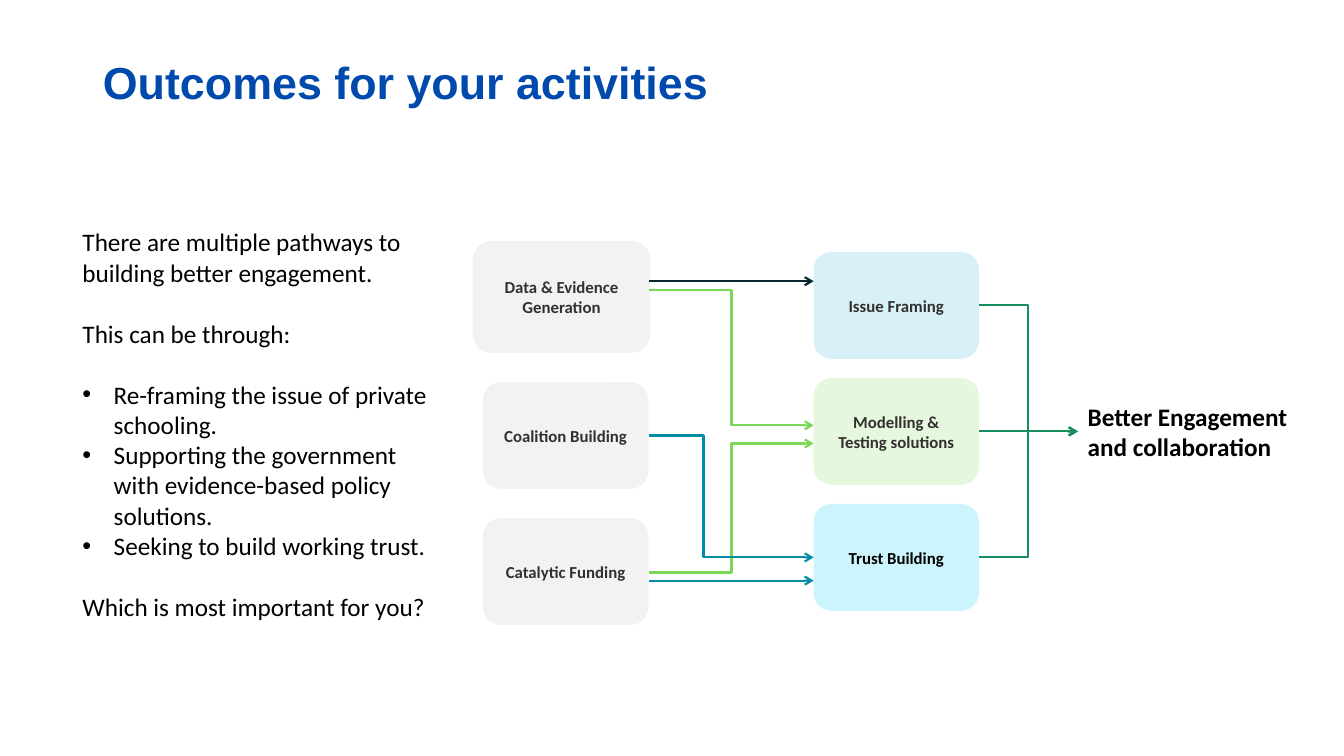
import pptx
import pptx.util
import pptx.dml.color
import pptx.enum.shapes
import pptx.enum.text
import pptx.oxml
import pptx.oxml.ns
from lxml import etree

CELL = pptx.util.Inches(0.1)
GREY, INK, BLACK = "F2F2F2", "34302F", "000000"
LIME, TEAL, GREEN, NAVY = "7BD857", "008DA5", "148F5D", "082730"


def cells(*counts):
    """Turn counts of grid cells into lengths."""
    return [round(count * CELL) for count in counts]


def colour(hex_code):
    """Turn a hex string into a colour."""
    return pptx.dml.color.RGBColor.from_string(hex_code)


def write(paragraph, text, size, hex_code, bold=False, font="Calibri"):
    """Add one formatted run to a paragraph."""
    run = paragraph.add_run()
    run.text = text
    run.font.name, run.font.size, run.font.bold = font, pptx.util.Pt(size), bold
    run.font.color.rgb = colour(hex_code)


def text_area(slide, box):
    """Add a wrapping text box and return its text frame."""
    frame = slide.shapes.add_textbox(*cells(*box)).text_frame
    frame.word_wrap = True
    return frame


def add_heading(slide, box, text):
    """Place and format the title."""
    heading = slide.shapes.title
    heading.left, heading.top, heading.width, heading.height = cells(*box)
    frame = heading.text_frame
    frame.auto_size = pptx.enum.text.MSO_AUTO_SIZE.NONE
    frame.vertical_anchor = pptx.enum.text.MSO_ANCHOR.MIDDLE
    paragraph = frame.paragraphs[0]
    paragraph.alignment = pptx.enum.text.PP_ALIGN.LEFT
    paragraph.line_spacing = 0.9
    write(paragraph, text, 32, "004AAD", True, "Arial")


def add_explanation(slide, box):
    """Write the left column with its bulleted pathways."""
    lines = [
        ("There are multiple pathways to building better engagement.", False, 0),
        ("This can be through:", False, 22),
        ("Re-framing the issue of private schooling.", True, 22),
        ("Supporting the government with evidence-based policy solutions.", True, 0),
        ("Seeking to build working trust.", True, 0),
        ("Which is most important for you?", False, 22),
    ]
    frame = text_area(slide, box)
    for index, (text, bulleted, gap) in enumerate(lines):
        paragraph = frame.add_paragraph() if index else frame.paragraphs[0]
        paragraph.space_before = pptx.util.Pt(gap)
        write(paragraph, text, 18, BLACK)
        if bulleted:
            properties = paragraph._p.get_or_add_pPr()
            indent = pptx.util.Inches(0.31)
            properties.set("marL", str(indent))
            properties.set("indent", str(-indent))
            for tag, key, value in (("a:buFont", "typeface", "Arial"), ("a:buChar", "char", "•")):
                etree.SubElement(properties, pptx.oxml.ns.qn(tag)).set(key, value)


def add_step(slide, box, text, fill, ink=INK):
    """Draw one rounded step of the pathway."""
    step = slide.shapes.add_shape(
        pptx.enum.shapes.MSO_SHAPE.ROUNDED_RECTANGLE, *cells(*box))
    step.shadow.inherit = False
    step.fill.solid()
    step.fill.fore_color.rgb = colour(fill)
    step.line.fill.background()
    frame = step.text_frame
    frame.word_wrap = True
    frame.vertical_anchor = pptx.enum.text.MSO_ANCHOR.MIDDLE
    paragraph = frame.paragraphs[0]
    paragraph.alignment = pptx.enum.text.PP_ALIGN.CENTER
    write(paragraph, text, 12, ink, True)


def add_link(slide, start, end, hex_code, bend=None):
    """Draw an arrow, bent at a share of its width when one is given."""
    kinds = pptx.enum.shapes.MSO_CONNECTOR
    kind = kinds.STRAIGHT if bend is None else kinds.ELBOW
    link = slide.shapes.add_connector(kind, *cells(*start, *end))
    link.line.color.rgb = colour(hex_code)
    link.line.width = pptx.util.Pt(1.5)
    qn = pptx.oxml.ns.qn
    properties = link._element.spPr
    etree.SubElement(properties.find(qn("a:ln")), qn("a:tailEnd")).set("type", "arrow")
    etree.SubElement(properties, qn("a:effectLst"))
    if bend is not None:
        guide = etree.SubElement(properties.find(qn("a:prstGeom")).find(qn("a:avLst")), qn("a:gd"))
        guide.set("name", "adj1")
        guide.set("fmla", f"val {round(bend * 100000)}")


def add_pathways(slide, box):
    """Draw activities, outcomes, the goal and the arrows between them."""
    left, top, width, height = box
    step_width, step_height = 16.4, 10.6
    activity_right, outcome_left = left + 17.5, left + 33.8
    outcome_right, goal_left = outcome_left + step_width, left + 60

    add_step(slide, (left, top, 17.6, 11.1), "Data & Evidence Generation", GREY)
    for text, offset in (("Coalition Building", 14), ("Catalytic Funding", 27.5)):
        add_step(slide, (left + 1, top + offset, step_width, step_height), text, GREY)

    outcomes = [
        ("Issue Framing", "D8F1F9", INK),
        ("Modelling & Testing solutions", "E5F7DD", INK),
        ("Trust Building", "CCF4FC", BLACK),
    ]
    goal_middle = top + 18.9
    for row, (text, fill, ink) in enumerate(outcomes):
        outcome_top = top + 1.1 + 12.5 * row
        add_step(slide, (outcome_left, outcome_top, step_width, step_height), text, fill, ink)
        add_link(slide, (outcome_right, outcome_top + step_height / 2),
                 (goal_left, goal_middle), GREEN, 0.5)

    activity_links = [
        (4, 4, NAVY, None),
        (4.9, 18.3, LIME, 0.5),
        (32.9, 20.1, LIME, 0.5),
        (33.7, 33.7, TEAL, None),
        (19.3, 31.4, TEAL, 0.33),
    ]
    for start, end, hex_code, bend in activity_links:
        add_link(slide, (activity_right, top + start), (outcome_left, top + end), hex_code, bend)

    goal = text_area(slide, (goal_left, top + 15.4, width - 60, 7.1))
    write(goal.paragraphs[0], "Better Engagement and collaboration", 18, BLACK, True)


def main():
    """Build and save the slide."""
    deck = pptx.Presentation()
    deck.slide_width = pptx.util.Inches(13.33)
    deck.slide_height = pptx.util.Inches(7.5)
    slide = deck.slides.add_slide(deck.slide_layouts[5])
    add_heading(slide, (9.2, 4, 67.9, 8.9), "Outcomes for your activities")
    add_pathways(slide, (46.9, 23.9, 82, 38.1))
    add_explanation(slide, (7.2, 22, 37.3, 40.4))
    deck.save("out.pptx")


if __name__ == "__main__":
    main()
